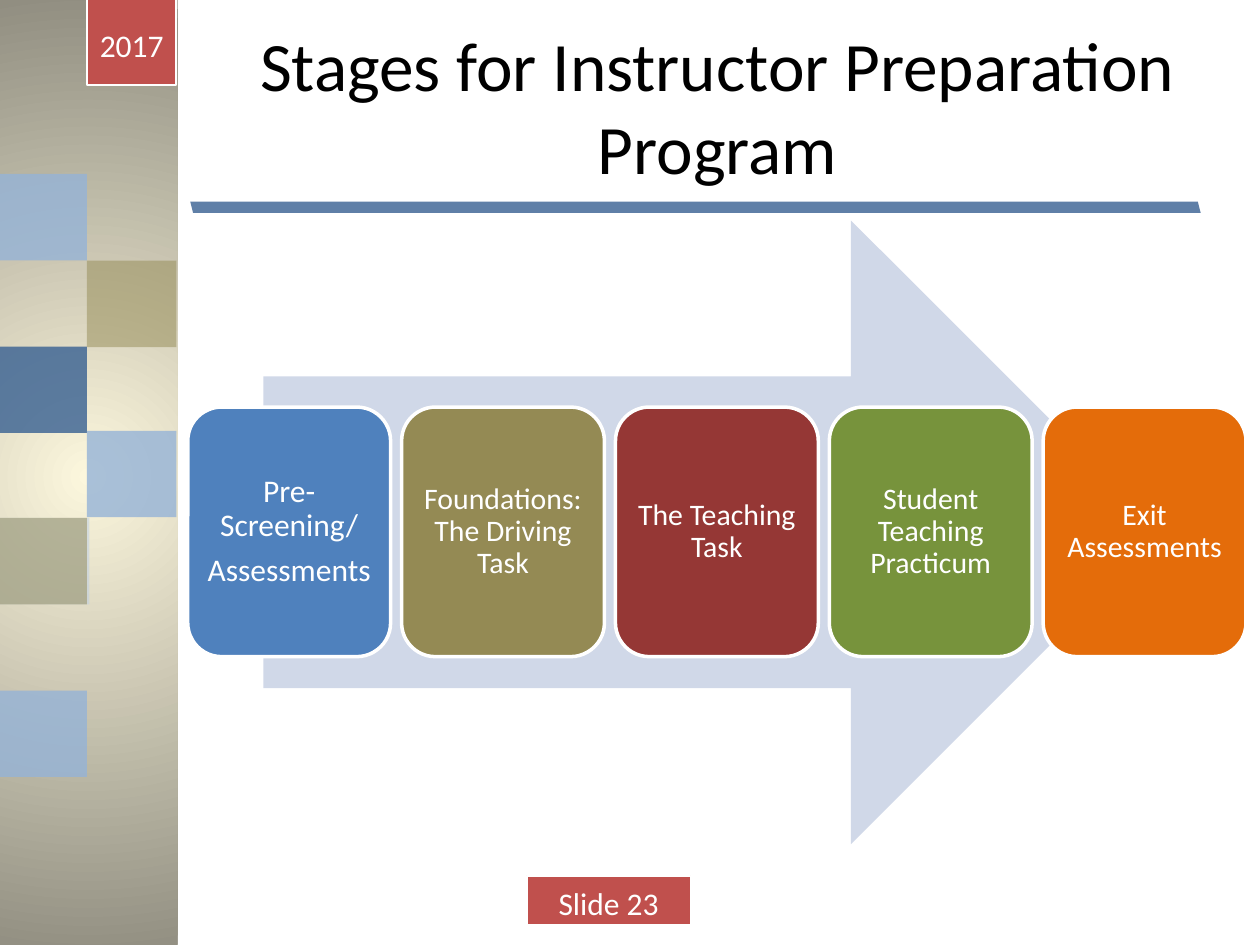
import pptx
import pptx.dml.color
import pptx.enum.shapes
import pptx.enum.text
import pptx.oxml
import pptx.oxml.ns
import pptx.util

Pt = pptx.util.Pt
RGB = pptx.dml.color.RGBColor
SHAPE = pptx.enum.shapes.MSO_SHAPE
CENTER = pptx.enum.text.PP_ALIGN.CENTER
MIDDLE = pptx.enum.text.MSO_ANCHOR.MIDDLE
qn = pptx.oxml.ns.qn

WHITE = RGB(0xFF, 0xFF, 0xFF)
BLACK = RGB(0, 0, 0)
CREAM = RGB(0xFC, 0xF7, 0xDD)
STONE = RGB(0x91, 0x8E, 0x81)
PALE = RGB(0xB9, 0xCD, 0xE5)
SKY = RGB(0x95, 0xB3, 0xD7)
NAVY = RGB(0x37, 0x60, 0x92)
TAN = RGB(0x94, 0x8A, 0x54)
RED = RGB(0xC0, 0x50, 0x4D)
ARROW = RGB(0xD0, 0xD8, 0xE8)
BLUE = RGB(0x4F, 0x81, 0xBD)
MAROON = RGB(0x95, 0x37, 0x35)
GREEN = RGB(0x77, 0x93, 0x3C)
ORANGE = RGB(0xE4, 0x6C, 0x0A)

FONT = "Calibri"
TITLE = "Stages for Instructor Preparation Program"
STAGES = [  # paragraphs, text size, colour
    (["Pre-Screening/", "Assessments"], 18, BLUE),
    (["Foundations: The Driving Task"], 17, TAN),
    (["The Teaching Task"], 17, MAROON),
    (["Student Teaching Practicum"], 17, GREEN),
    (["Exit Assessments"], 17, ORANGE),
]
TILE_W, TILE_H = 51.1, 49.4
LEFT_COL, RIGHT_COL = -1.4, 49.7
TILES = [  # left, top, colour, opacity in percent
    (0, 295.9, PALE, 50),
    (LEFT_COL, 198, NAVY, 80),
    (LEFT_COL, 394.6, SKY, 80),
    (LEFT_COL, 99.4, SKY, 80),
    (LEFT_COL, 295.9, TAN, 50),
    (RIGHT_COL, 246.2, SKY, 80),
    (RIGHT_COL, 149, TAN, 50),
]
BADGES = [  # text, left, top, width, height
    ("2017", RIGHT_COL, -0.7, TILE_W, TILE_H),
    ("Slide 23", 301, 500.4, 93.6, 28.1),
]
CARD_LEFT, CARD_TOP, CARD_W, CARD_H, CARD_PITCH = 107.3, 232.6, 115.9, 142.6, 122.2


def add_shape(s, kind, box, color, opacity=100, line_width=0):
    sp = s.shapes.add_shape(kind, *[Pt(v) for v in box])
    sp.shadow.inherit = False
    sp.fill.solid()
    sp.fill.fore_color.rgb = color
    if opacity < 100:
        clr = sp.fill._xPr.find(".//" + qn("a:srgbClr"))
        alpha = pptx.oxml.parse_xml(
            f'<a:alpha {pptx.oxml.ns.nsdecls("a")} val="{opacity * 1000}"/>')
        clr.append(alpha)
    if line_width:
        sp.line.color.rgb = WHITE
        sp.line.width = Pt(line_width)
    else:
        sp.line.fill.background()
    return sp


def add_text(sp, lines, size, color, spacing=None, after=None):
    tf = sp.text_frame
    tf.word_wrap = True
    tf.vertical_anchor = MIDDLE
    for i, line in enumerate(lines):
        p = tf.add_paragraph() if i else tf.paragraphs[0]
        p.alignment = CENTER
        if spacing:
            p.line_spacing = spacing
            p.space_after = Pt(after)
        r = p.add_run()
        r.text = line
        r.font.size = Pt(size)
        r.font.name = FONT
        r.font.color.rgb = color
    return tf


def add_sidebar(s):
    sp = add_shape(s, SHAPE.RECTANGLE, (-0.7, 0, 102.2, 545), CREAM)
    sp.fill.gradient()
    for stop, color in zip(sp.fill.gradient_stops, (CREAM, STONE)):
        stop.color.rgb = color
    lin = sp._element.spPr.find(".//" + qn("a:lin"))
    radial = pptx.oxml.parse_xml(
        f'<a:path {pptx.oxml.ns.nsdecls("a")} path="circle">'
        '<a:fillToRect l="50000" t="50000" r="50000" b="50000"/></a:path>')
    lin.getparent().replace(lin, radial)
    for left, top, color, opacity in TILES:
        add_shape(s, SHAPE.RECTANGLE, (left, top, TILE_W, TILE_H), color, opacity)


def main():
    prs = pptx.Presentation()
    prs.slide_width, prs.slide_height = Pt(720), Pt(540)
    s = prs.slides.add_slide(prs.slide_layouts[5])

    title = s.shapes.title
    title.left, title.top, title.width, title.height = Pt(100), Pt(15), Pt(620), Pt(90)
    add_text(title, [TITLE], 39.6, BLACK)

    add_sidebar(s)
    for text, *box in BADGES:
        sp = add_shape(s, SHAPE.RECTANGLE, box, RED, line_width=1)
        add_text(sp, [text], 18, WHITE, 1.15, 10)

    rule = add_shape(s, SHAPE.PARALLELOGRAM, (108.7, 115.2, 577.4, 6.5), NAVY, 80)
    rule._element.spPr.find(qn("a:xfrm")).set("flipV", "1")

    add_shape(s, SHAPE.RIGHT_ARROW, (150.5, 126, 514, 356.4), ARROW)
    for i, (lines, size, color) in enumerate(STAGES):
        box = (CARD_LEFT + i * CARD_PITCH, CARD_TOP, CARD_W, CARD_H)
        sp = add_shape(s, SHAPE.ROUNDED_RECTANGLE, box, color, line_width=2)
        tf = add_text(sp, lines, size, WHITE, 0.9, 0.35 * size)
        tf.margin_left = tf.margin_right = tf.margin_top = tf.margin_bottom = Pt(5)

    prs.save("out.pptx")


if __name__ == "__main__":
    main()
